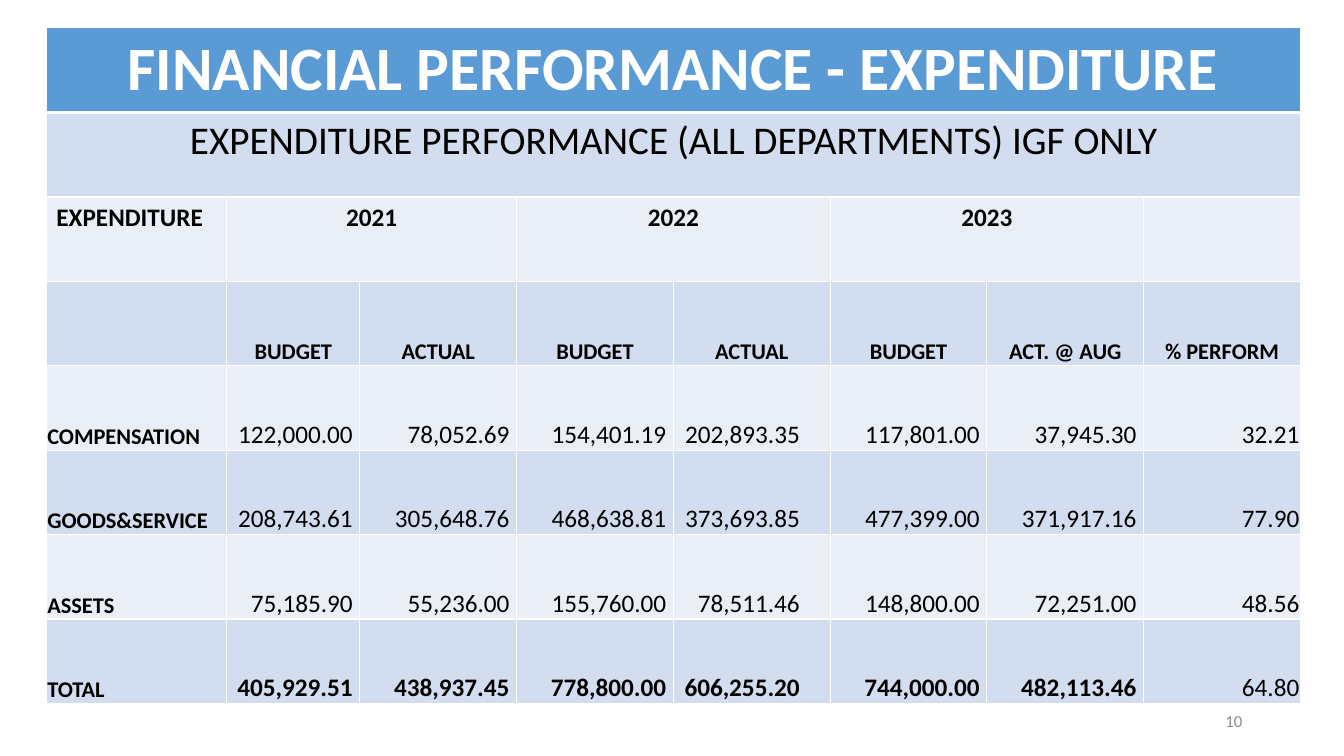
from lxml.etree import SubElement
from pptx import Presentation
from pptx.dml.color import RGBColor as RGB
from pptx.enum.text import MSO_ANCHOR as ANCHOR, PP_ALIGN as ALIGN
from pptx.oxml.ns import qn
from pptx.util import Inches, Pt

COLORS = {"header": "5B9BD5", "dark": "D2DEEF", "light": "EAEFF7",
          "white": "FFFFFF", "black": "000000", "number": "8C8C8C"}


class Deck:
    def __init__(self, prs, font="Calibri"):
        self.font = font
        self.s = prs.slides.add_slide(prs.slide_layouts[6])

    def set_text(self, tf, text, size, color="black", bold=False, align=ALIGN.LEFT):
        p = tf.paragraphs[0]
        p.text = text
        p.alignment = align
        f = p.font
        f.name, f.size, f.bold = self.font, Pt(size), bold
        f.color.rgb = RGB.from_string(COLORS[color])

    def text_box(self, x, y, w, h, text, size, color, align):
        tf = self.s.shapes.add_textbox(Inches(x), Inches(y), Inches(w), Inches(h)).text_frame
        tf.word_wrap = True
        tf.vertical_anchor = ANCHOR.MIDDLE
        self.set_text(tf, text, size, color, align=align)

    def table(self, x, y, widths, heights):
        table = self.s.shapes.add_table(
            len(heights), len(widths), Inches(x), Inches(y),
            Inches(sum(widths)), Inches(sum(heights))).table
        table.first_row = table.horz_banding = False
        for col, w in zip(table.columns, widths):
            col.width = Inches(w)
        for row, h in zip(table.rows, heights):
            row.height = Inches(h)
        return table

    def style_cell(self, cell, fill, top=1, bottom=1):
        tcPr = cell._tc.get_or_add_tcPr()
        for side, width in (("L", 1), ("R", 1), ("T", top), ("B", bottom)):
            ln = SubElement(tcPr, qn(f"a:ln{side}"), w=str(int(Pt(width))))
            line = SubElement(ln, qn("a:solidFill"))
            SubElement(line, qn("a:srgbClr"), val=COLORS["white"])
        cell.fill.solid()
        cell.fill.fore_color.rgb = RGB.from_string(COLORS[fill])

    def bottom_cell(self, cell, text, size, bold, align, right=0.01):
        cell.vertical_anchor = ANCHOR.BOTTOM
        cell.margin_left = cell.margin_top = Inches(0.01)
        cell.margin_right, cell.margin_bottom = Inches(right), Inches(0)
        self.set_text(cell.text_frame, text, size, bold=bold, align=align)


HEADINGS = ["BUDGET", "ACTUAL", "BUDGET", "ACTUAL", "BUDGET", "ACT. @ AUG", "% PERFORM"]
FIGURES = [
    ("COMPENSATION", "122,000.00", "78,052.69", "154,401.19", "202,893.35",
     "117,801.00", "37,945.30", "32.21"),
    ("GOODS&SERVICE", "208,743.61", "305,648.76", "468,638.81", "373,693.85",
     "477,399.00", "371,917.16", "77.90"),
    ("ASSETS", "75,185.90", "55,236.00", "155,760.00", "78,511.46",
     "148,800.00", "72,251.00", "48.56"),
    ("TOTAL", "405,929.51", "438,937.45", "778,800.00", "606,255.20",
     "744,000.00", "482,113.46", "64.80"),
]
RIGHT_MARGINS = [0.07, 0.07, 0.07, 0.3, 0.07, 0.07, 0.01]
TABLE_W, TABLE_H, ROWS = 12.44, 6.7, 8
FIRST_COLS = [1.79, 1.32]


def main():
    prs = Presentation()
    prs.slide_width, prs.slide_height = Inches(13.33), Inches(7.5)
    deck = Deck(prs)

    # Table grid, fills and borders
    widths = FIRST_COLS + [(TABLE_W - sum(FIRST_COLS)) / 6] * 6
    table = deck.table(0.46, 0.27, widths, [TABLE_H / ROWS] * ROWS)
    fills = ["header"] + ["dark" if r % 2 else "light" for r in range(1, ROWS)]
    for r, fill in enumerate(fills):
        for c in range(len(widths)):
            deck.style_cell(table.cell(r, c), fill,
                            top=3 if r == 1 else 1, bottom=3 if r == 0 else 1)

    # Title rows
    for r in (0, 1):
        table.cell(r, 0).merge(table.cell(r, 7))
    deck.set_text(table.cell(0, 0).text_frame, "FINANCIAL PERFORMANCE - EXPENDITURE",
                  44, "white", True, ALIGN.CENTER)
    deck.set_text(table.cell(1, 0).text_frame,
                  "EXPENDITURE PERFORMANCE (ALL DEPARTMENTS) IGF ONLY", 28, align=ALIGN.CENTER)

    # Year row
    deck.set_text(table.cell(2, 0).text_frame, "EXPENDITURE", 18, bold=True)
    for c, year in zip((1, 3, 5), ("2021", "2022", "2023")):
        table.cell(2, c).merge(table.cell(2, c + 1))
        deck.set_text(table.cell(2, c).text_frame, year, 18, bold=True, align=ALIGN.CENTER)

    # Column headings
    for c, heading in enumerate(HEADINGS, 1):
        deck.bottom_cell(table.cell(3, c), heading, 16, True, ALIGN.CENTER)

    # Figures
    for r, (name, *values) in enumerate(FIGURES, 4):
        deck.bottom_cell(table.cell(r, 0), name, 16, True, ALIGN.LEFT)
        for c, (value, margin) in enumerate(zip(values, RIGHT_MARGINS), 1):
            bold = name == "TOTAL" and c < 7
            deck.bottom_cell(table.cell(r, c), value, 18, bold, ALIGN.RIGHT, margin)

    # Slide number
    deck.text_box(9.42, 6.95, 3, 0.4, "10", 12, "number", ALIGN.RIGHT)
    prs.save("out.pptx")


if __name__ == "__main__":
    main()
